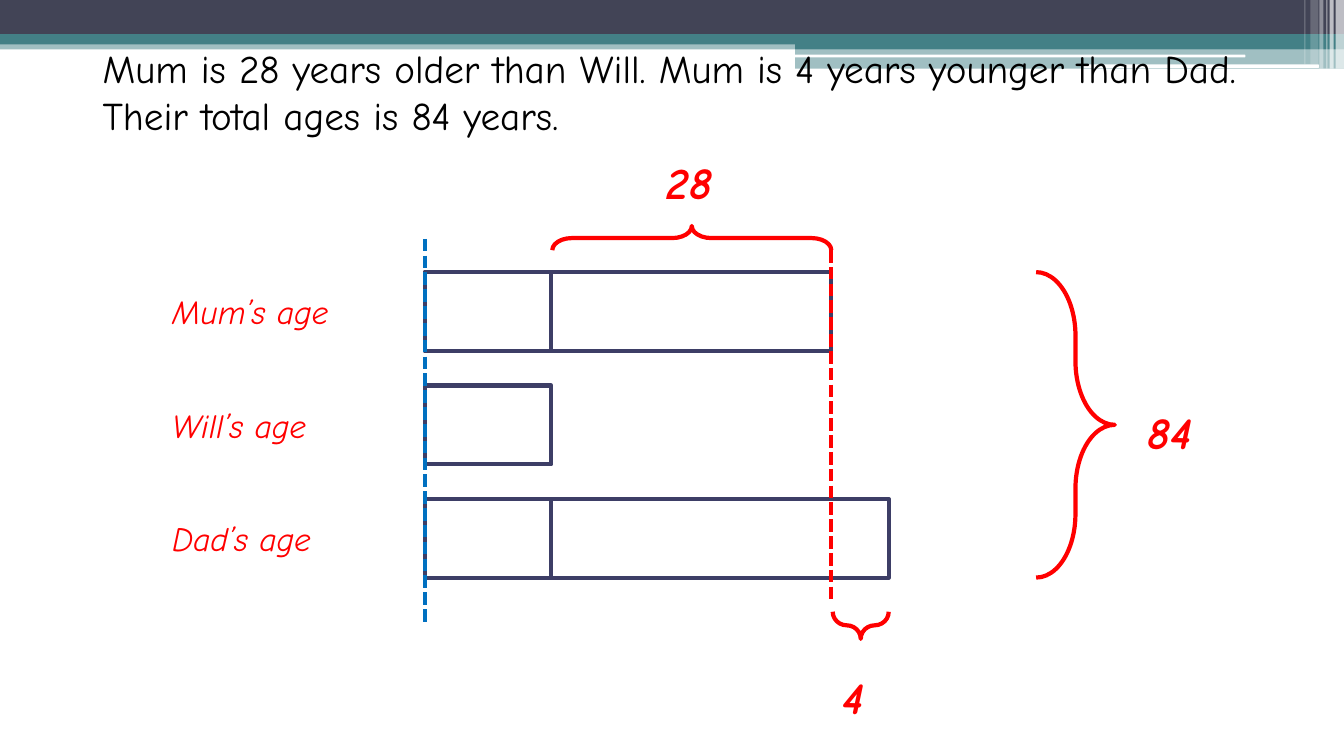
from dataclasses import dataclass
from lxml import etree
from pptx import Presentation
from pptx import util as u
from pptx.dml.color import RGBColor
from pptx.enum import dml, shapes, text
from pptx.oxml.ns import qn

Pt = u.Pt
PRESET = shapes.MSO_SHAPE


@dataclass(frozen=True)
class Theme:
    font: str = "Comic Neue"
    navy: str = "424456"
    teal: str = "438086"
    white: str = "FFFFFF"
    black: str = "000000"
    red: str = "FF0000"
    blue: str = "0070C0"
    bar: str = "3D3E66"
    problem_size: int = 28
    label_size: int = 24
    number_size: int = 32
    line: int = 3


@dataclass(frozen=True)
class Box:
    left: float
    top: float
    width: float
    height: float

    def inner(self, left, top, width, height):
        """Box placed relative to this one."""
        return Box(self.left + left, self.top + top, width, height)

    def points(self):
        return [Pt(n) for n in (self.left, self.top, self.width, self.height)]


THEME = Theme()


def add_filled(page, box, colour, opacity=100, preset=PRESET.RECTANGLE):
    shape = page.shapes.add_shape(preset, *box.points())
    shape.shadow.inherit = False
    shape.line.fill.background()
    shape.fill.solid()
    shape.fill.fore_color.rgb = RGBColor.from_string(colour)
    if opacity < 100:
        tint = shape._element.spPr.find(qn("a:solidFill"))[0]
        etree.SubElement(tint, qn("a:alpha")).set("val", str(opacity * 1000))


def style_line(line, colour):
    line.color.rgb = RGBColor.from_string(colour)
    line.width = Pt(THEME.line)


def add_outline(page, box, colour, preset=PRESET.RECTANGLE):
    shape = page.shapes.add_shape(preset, *box.points())
    shape.shadow.inherit = False
    shape.fill.background()
    style_line(shape.line, colour)
    return shape


def add_brace(page, box, rotation=0):
    """Brace that fills the box as seen, after any quarter turn."""
    if rotation:
        shift = (box.width - box.height) / 2
        box = box.inner(shift, -shift, box.height, box.width)
    brace = add_outline(page, box, THEME.red, PRESET.RIGHT_BRACE)
    brace.adjustments[0] = 0.81
    brace.rotation = rotation


def add_dashed(page, x, top, bottom, colour):
    line = page.shapes.add_connector(
        shapes.MSO_CONNECTOR.STRAIGHT, Pt(x), Pt(top), Pt(x), Pt(bottom))
    style_line(line.line, colour)
    line.line.dash_style = dml.MSO_LINE.SQUARE_DOT
    etree.SubElement(line._element.spPr, qn("a:effectLst"))


def add_text(page, box, words, size, colour, bold=False, italic=False):
    frame = page.shapes.add_textbox(*box.points()).text_frame
    frame.word_wrap = True
    frame.vertical_anchor = text.MSO_ANCHOR.TOP
    para = frame.paragraphs[0]
    para.text = words
    font = para.font
    font.name, font.size = THEME.font, Pt(size)
    font.bold, font.italic = bold, italic
    font.color.rgb = RGBColor.from_string(colour)
    return frame


def add_number(page, box, words):
    add_text(page, box, words, THEME.number_size, THEME.red, bold=True, italic=True)


def draw_header(page, box):
    # Bands across the top
    for left, top, height, colour, opacity in (
            (0, 28.8, 6.5, THEME.teal, 50),
            (0, 0, 24.5, THEME.navy, 100),
            (0, 24.5, 7.2, THEME.teal, 100),
            (568, 28, 7.2, THEME.teal, 100),
            (568, 34.6, 14.4, THEME.teal, 50)):
        add_filled(page, box.inner(left, top, box.width - left, height), colour, opacity)
    # White slivers
    for left, top, width, height in ((567.5, 39, 322, 2), (774, 46, 168, 2.6)):
        add_filled(page, box.inner(left, top, width, height), THEME.white,
                   preset=PRESET.ROUNDED_RECTANGLE)
    # Pale stripes at the right end
    for left, width, height, opacity in (
            (954, 6, 49, 65), (949.7, 2.9, 49, 65), (947.5, 0.7, 49, 60),
            (942.5, 2.9, 49, 40), (936, 5.8, 46, 20), (931.7, 0.7, 46, 30)):
        add_filled(page, box.inner(left, 0, width, height), THEME.white, opacity)


def draw_problem(page, box):
    frame = add_text(
        page, box,
        "Mum is 28 years older than Will. Mum is 4 years younger than Dad. "
        "Their total ages is 84 years.",
        THEME.problem_size, THEME.black)
    frame.margin_top = Pt(6.6)


def draw_bar_model(page, box):
    unit, mum, dad = 90, 290, 331
    bar, pitch = 56.2, 81
    # Labelled bars, the longer ones marked off at Will's age
    for row, (name, length) in enumerate(
            (("Mum’s age", mum), ("Will’s age", unit), ("Dad’s age", dad))):
        top = row * pitch
        add_text(page, box.inner(-188, top + 10.1, 137.5, 36), name,
                 THEME.label_size, THEME.red, italic=True)
        for width in sorted({length, unit}, reverse=True):
            add_outline(page, box.inner(0, top, width, bar), THEME.bar)
    # Braces for the total and the differences
    add_brace(page, box.inner(436.3, 0, 56.2, box.height))
    add_brace(page, box.inner(unit + 0.7, -33, mum - unit - 0.7, 17.3), 270)
    add_brace(page, box.inner(mum + 1, 242.6, dad - mum - 1, 19.4), 90)
    # Values
    add_number(page, box.inner(290.9, 280.1, 38.2, 46), "4")
    add_number(page, box.inner(165.5, -87.1, 54.7, 46), "28")
    add_number(page, box.inner(508.9, 90.8, 57.6, 46), "84")
    # Guide lines
    add_dashed(page, box.left + mum, box.top - 15.8, box.top + 233.3, THEME.red)
    add_dashed(page, box.left, box.top - 23.8, box.top + 250.6, THEME.blue)


def main():
    deck = Presentation()
    deck.slide_width, deck.slide_height = Pt(960), Pt(540)
    page = deck.slides.add_slide(deck.slide_layouts[6])
    draw_header(page, Box(0, 0, 960, 49))
    draw_problem(page, Box(66.2, 25.2, 828, 82))
    draw_bar_model(page, Box(303.8, 194.4, 331, 218.2))
    deck.save("out.pptx")


if __name__ == "__main__":
    main()
